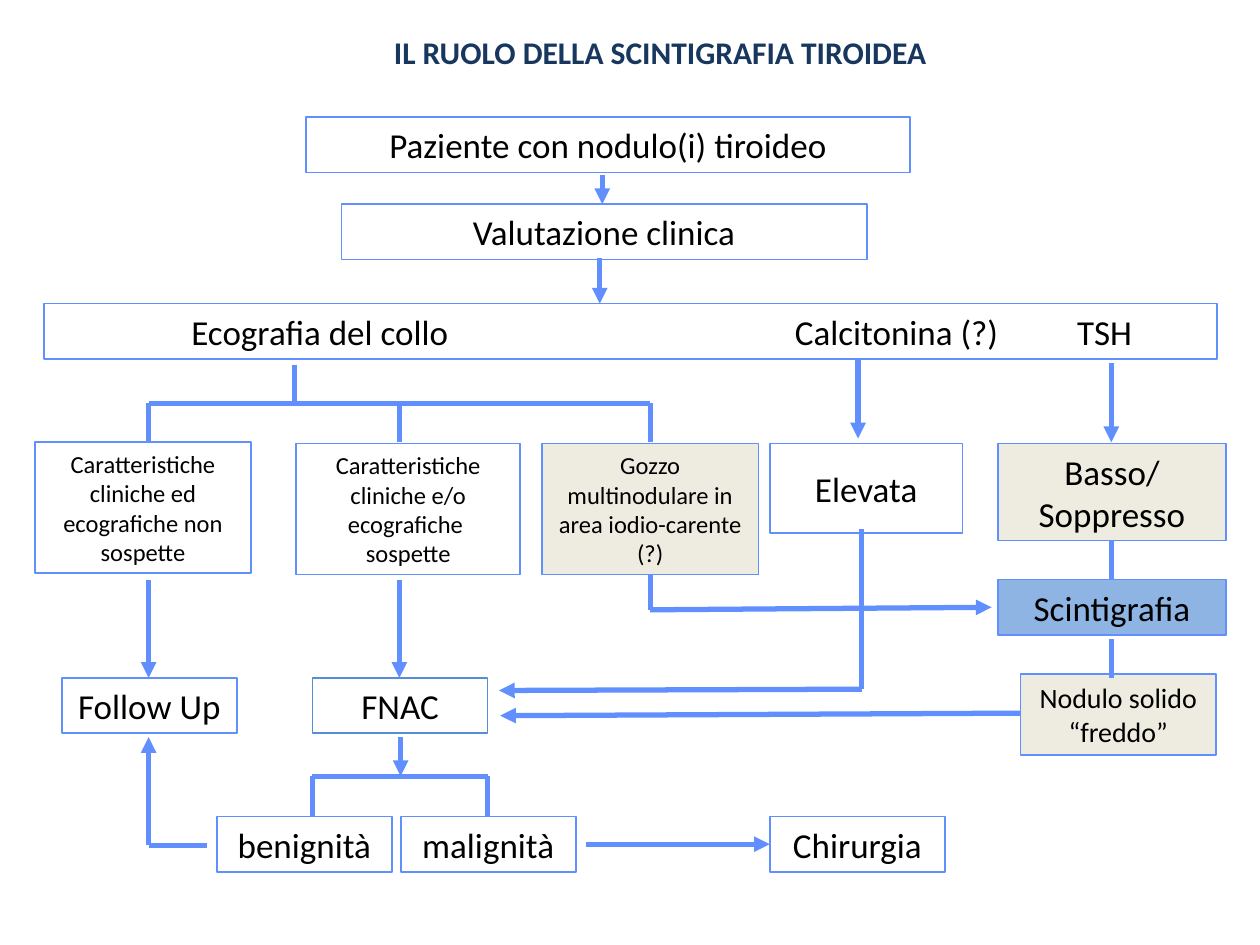
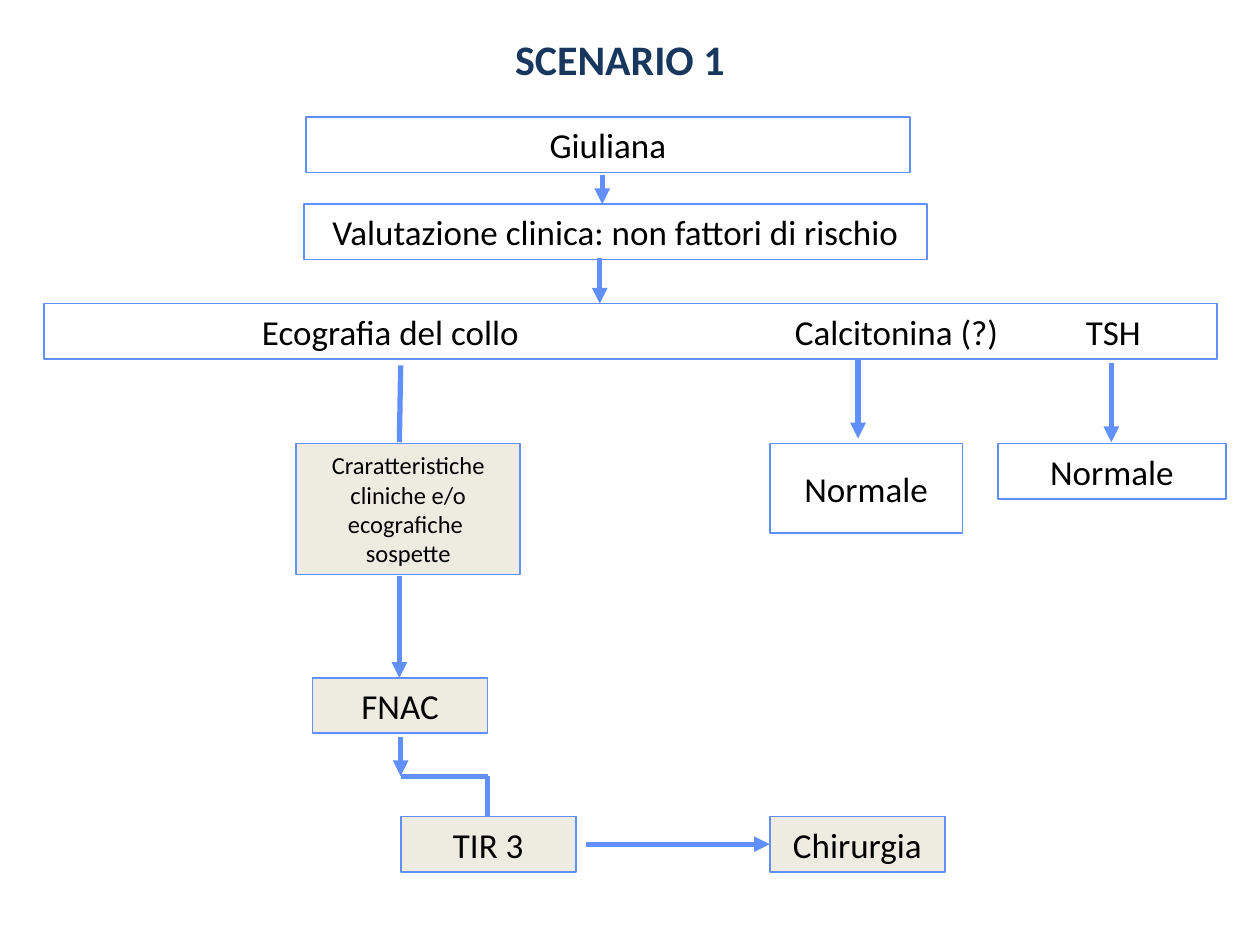
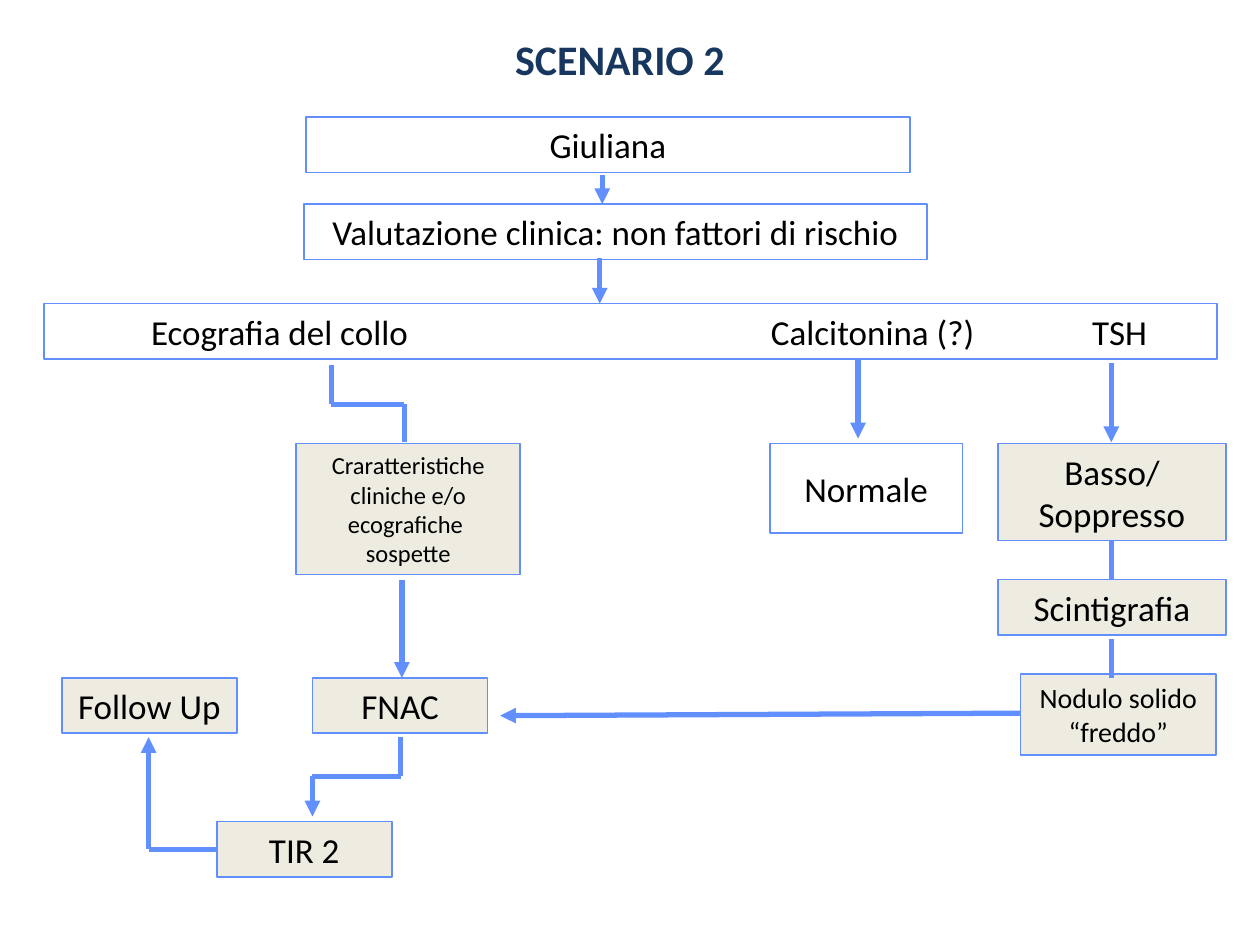
"""Build three flowchart slides on thyroid scintigraphy."""
from itertools import pairwise

from lxml.etree import SubElement
from pptx import Presentation
from pptx.dml.color import RGBColor
from pptx.enum.shapes import MSO_CONNECTOR as Connector, MSO_SHAPE as Shape
from pptx.enum.text import MSO_ANCHOR as Anchor, PP_ALIGN as Align
from pptx.oxml.ns import qn
from pptx.util import Inches, Pt

COLORS = {"line": "618FFD", "edge": "558ED5", "title": "17375E", "text": "000000",
          "beige": "EEECE1", "blue": "8EB4E3", "white": "FFFFFF"}
FONT = "Calibri"

ROW, SMALL, WIDE = 0.44, 1.39, 1.81
TRAITS_TOP, TRAITS_HEIGHT = 3.52, 1.04
FNAC_TOP, OUTCOME_TOP = 5.38, 6.48
FOLLOW, FNAC, GOITER, CALCITONIN, TSH = 1.18, 3.17, 5.16, 6.81, 8.82
BENIGN, MALIGNANT = 2.48, 3.87
BRANCH, FORK = 3.2, 6.16

PLACES = {
    "patient": (2.43, 0.93, 4.79, ROW, 20),
    "clinic": (2.71, 1.62, 4.17, ROW, 20),
    "clinic wide": (2.41, 1.62, 4.95, ROW, 20),
    "tests": (0.35, 2.41, 9.31, ROW, 20),
    "harmless": (0.28, 3.51, 1.71, TRAITS_HEIGHT, 14),
    "suspect": (2.35, TRAITS_TOP, 1.78, TRAITS_HEIGHT, 14),
    "goiter": (4.3, TRAITS_TOP, 1.72, TRAITS_HEIGHT, 14),
    "calcitonin": (6.11, TRAITS_TOP, 1.53, 0.71, 20),
    "tsh": (7.92, TRAITS_TOP, WIDE, ROW, 20),
    "tsh low": (7.92, TRAITS_TOP, WIDE, 0.77, 20),
    "scan": (7.92, 4.6, WIDE, ROW, 20),
    "cold": (8.1, 5.35, 1.55, 0.64, 16),
    "follow": (0.49, FNAC_TOP, SMALL, ROW, 20),
    "fnac": (2.48, FNAC_TOP, SMALL, ROW, 20),
    "benign": (1.72, OUTCOME_TOP, SMALL, ROW, 20),
    "benign low": (1.72, 6.52, SMALL, ROW, 20),
    "malignant": (3.18, OUTCOME_TOP, SMALL, ROW, 20),
    "surgery": (6.11, OUTCOME_TOP, SMALL, ROW, 20),
}

COMMON_ARROWS = [
    [(4.78, 1.39), (4.78, 1.62)],
    [(4.76, 2.05), (4.76, 2.41)],
    [(CALCITONIN, 2.85), (CALCITONIN, 3.48)],
    [(TSH, 2.88), (TSH, 3.51)],
]
COLD_ARROW = [(8.1, 5.66), (3.97, 5.68)]
SURGERY_ARROW = [(4.65, 6.7), (6.11, 6.7)]
FNAC_ARROW = [(3.18, 5.85), (3.18, FORK)]
SCAN_LINES = [[(TSH, 4.29), (TSH, 4.6)], [(TSH, 5.07), (TSH, FNAC_TOP)]]
MALIGNANT_LINE = [(3.18, FORK), (MALIGNANT, FORK), (MALIGNANT, OUTCOME_TOP)]

LOW_TSH = ("tsh low", "Basso/\nSoppresso", "beige")
COLD_NODULE = ("cold", "Nodulo solido\n“freddo”", "beige")
SUSPECT = ("suspect", "Craratteristiche cliniche e/o ecografiche  sospette", "beige")
SCENARIO = [
    ("patient", "Giuliana", None),
    ("clinic wide", "Valutazione clinica: non fattori di rischio", None),
    SUSPECT,
    ("calcitonin", "Normale", None),
    ("fnac", "FNAC", "beige"),
]
TESTS = ["Ecografia del collo", "Calcitonina (?)", "TSH"]

SLIDES = [
    {
        "title": ("IL RUOLO DELLA SCINTIGRAFIA TIROIDEA", 18, (1.64, 0.21, 7.2, 0.4)),
        "stops": (1.07, 5.86, 8.1),
        "boxes": [
            ("patient", "Paziente con nodulo(i) tiroideo", None),
            ("clinic", "Valutazione clinica", None),
            ("harmless", "Caratteristiche cliniche ed ecografiche non sospette", "white"),
            ("suspect", "Caratteristiche cliniche e/o ecografiche  sospette", "white"),
            ("goiter", "Gozzo multinodulare in area iodio-carente\n(?)", "beige"),
            ("calcitonin", "Elevata", None),
            LOW_TSH,
            ("scan", "Scintigrafia", "blue"),
            COLD_NODULE,
            ("follow", "Follow Up", None),
            ("fnac", "FNAC", "white", "edge"),
            ("benign", "benignità", None),
            ("malignant", "malignità", None),
            ("surgery", "Chirurgia", None),
        ],
        "lines": SCAN_LINES + [
            [(2.34, 2.9), (2.34, BRANCH)],
            [(FOLLOW, 3.51), (FOLLOW, BRANCH), (GOITER, BRANCH), (GOITER, 3.51)],
            [(FNAC, BRANCH), (FNAC, 3.51)],
            [(BENIGN, OUTCOME_TOP), (BENIGN, FORK), (MALIGNANT, FORK),
             (MALIGNANT, OUTCOME_TOP)],
        ],
        "arrows": [
            [(FOLLOW, 4.6), (FOLLOW, FNAC_TOP)],
            [(FNAC, 4.6), (FNAC, FNAC_TOP)],
            [(GOITER, 4.56), (GOITER, 4.84), (7.87, 4.82)],
            [(6.84, 4.2), (6.84, 5.47), (3.96, 5.48)],
            [(1.64, 6.71), (FOLLOW, 6.71), (FOLLOW, 5.85)],
            COLD_ARROW, FNAC_ARROW, SURGERY_ARROW,
        ],
    },
    {
        "title": ("SCENARIO 1", 24, (2.62, 0.21, 4.6, 0.51)),
        "stops": (1.63, 5.86, 8.17),
        "boxes": SCENARIO + [
            ("tsh", "Normale", None),
            ("malignant", "TIR 3", "beige"),
            ("surgery", "Chirurgia", "beige"),
        ],
        "lines": [[(3.18, 2.9), (FNAC, 3.51)], MALIGNANT_LINE],
        "arrows": [[(FNAC, 4.57), (FNAC, FNAC_TOP)], FNAC_ARROW, SURGERY_ARROW],
    },
    {
        "title": ("SCENARIO 2", 24, (2.62, 0.21, 4.6, 0.51)),
        "stops": (0.75, 5.67, 8.22),
        "boxes": SCENARIO + [
            LOW_TSH,
            ("scan", "Scintigrafia", "beige"),
            COLD_NODULE,
            ("follow", "Follow Up", "beige"),
            ("benign low", "TIR 2", "beige"),
        ],
        "lines": SCAN_LINES + [[(2.63, 2.9), (2.63, 3.21), (3.21, 3.21), (3.21, 3.51)]],
        "arrows": [
            [(3.19, 4.6), (3.19, FNAC_TOP)],
            [(3.18, 5.85), (3.18, FORK), (BENIGN, FORK), (BENIGN, OUTCOME_TOP)],
            [(1.72, 6.74), (FOLLOW, 6.74), (FOLLOW, 5.85)],
            COLD_ARROW,
        ],
    },
]


def color(name):
    return RGBColor.from_string(COLORS[name])


def write(shape, text, size, ink="text", bold=False, align=Align.CENTER):
    frame = shape.text_frame
    frame.word_wrap = True
    frame.vertical_anchor = Anchor.MIDDLE
    frame.text = text
    for para in frame.paragraphs:
        para.alignment = align
        for span in para.runs:
            for key, value in {"name": FONT, "size": Pt(size), "bold": bold}.items():
                setattr(span.font, key, value)
            span.font.color.rgb = color(ink)


def add_title(page, text, size, area):
    title = page.shapes.title
    for key, value in zip(("left", "top", "width", "height"), area):
        setattr(title, key, Inches(value))
    write(title, text, size, "title", True)


def add_box(page, place, text, fill, outline="line", align=Align.CENTER):
    *area, size = PLACES[place]
    box = page.shapes.add_shape(Shape.RECTANGLE, *map(Inches, area))
    box.shadow.inherit = False
    if fill:
        box.fill.solid()
        box.fill.fore_color.rgb = color(fill)
    else:
        box.fill.background()
    box.line.color.rgb = color(outline)
    box.line.width = Pt(1)
    write(box, text, size, align=align)
    return box


def add_tests(page, stops):
    text = "".join("\t" + test for test in TESTS)
    box = add_box(page, "tests", text, None, align=Align.LEFT)
    settings = box.text_frame.paragraphs[0]._p.get_or_add_pPr()
    tabs = SubElement(settings, qn("a:tabLst"))
    for stop in stops:
        SubElement(tabs, qn("a:tab"), pos=str(Inches(stop)), algn="l")


def add_route(page, points, arrow):
    for start, end in pairwise(points):
        line = page.shapes.add_connector(Connector.STRAIGHT, *map(Inches, start + end))
        line.line.color.rgb = color("line")
        line.line.width = Pt(3)
        properties = line.element.spPr
        if arrow and end == points[-1]:
            SubElement(properties.find(qn("a:ln")), qn("a:tailEnd"), type="triangle")
        SubElement(properties, qn("a:effectLst"))


def main():
    deck = Presentation()
    deck.slide_width, deck.slide_height = Inches(10), Inches(7.5)
    for content in SLIDES:
        page = deck.slides.add_slide(deck.slide_layouts[5])
        add_title(page, *content["title"])
        add_tests(page, content["stops"])
        for box in content["boxes"]:
            add_box(page, *box)
        for points in content["lines"]:
            add_route(page, points, False)
        for points in COMMON_ARROWS + content["arrows"]:
            add_route(page, points, True)
    deck.save("out.pptx")


if __name__ == "__main__":
    main()
